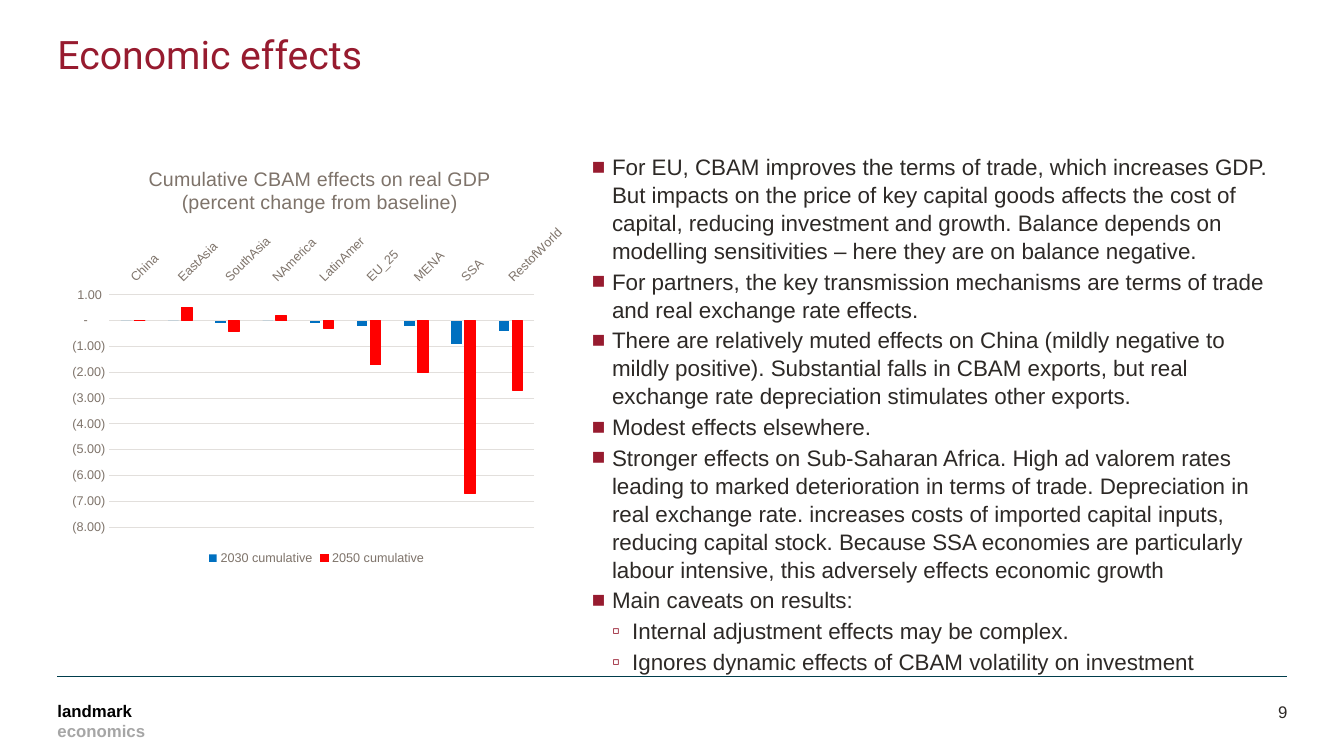
from lxml import etree
from pptx import Presentation
from pptx.chart.data import CategoryChartData
from pptx.dml.color import RGBColor
from pptx.enum.chart import (
    XL_CHART_TYPE as ChartType,
    XL_LEGEND_POSITION as LegendPosition,
    XL_TICK_LABEL_POSITION as LabelPosition,
    XL_TICK_MARK as TickMark,
)
from pptx.enum.shapes import MSO_CONNECTOR as Connector
from pptx.enum.text import MSO_ANCHOR as Anchor, MSO_AUTO_SIZE as AutoSize, PP_ALIGN as Align
from pptx.oxml.ns import qn
from pptx.util import Pt

PX = 9144
MAROON, INK, GREY, RULE = "971B2F", "2D2926", "7E736A", "E2DFDC"

BULLETS = [
    (1, "For EU, CBAM improves the terms of trade, which increases GDP. But impacts on the price of key "
        "capital goods affects the cost of capital, reducing investment and growth. Balance depends on "
        "modelling sensitivities – here they are on balance negative."),
    (1, "For partners, the key transmission mechanisms are terms of trade and real exchange rate effects."),
    (1, "There are relatively muted effects on China (mildly negative to mildly positive). Substantial "
        "falls in CBAM exports, but real exchange rate depreciation stimulates other exports."),
    (1, "Modest effects elsewhere."),
    (1, "Stronger effects on Sub-Saharan Africa. High ad valorem rates leading to marked deterioration in "
        "terms of trade. Depreciation in real exchange rate. increases costs of imported capital inputs, "
        "reducing capital stock. Because SSA economies are particularly labour intensive, this adversely "
        "effects economic growth"),
    (1, "Main caveats on results:"),
    (2, "Internal adjustment effects may be complex."),
    (2, "Ignores dynamic effects of CBAM volatility on investment"),
]
CHART_TITLE = ["Cumulative CBAM effects on real GDP", "(percent change from baseline)"]
REGIONS = ["China", "EastAsia", "SouthAsia", "NAmerica", "LatinAmer", "EU_25", "MENA", "SSA", "RestofWorld"]
SERIES = [
    ("2030 cumulative", "0070C0", [0, 0, -0.1, 0, -0.1, -0.2, -0.2, -0.9, -0.4]),
    ("2050 cumulative", "FF0000", [0, 0.5, -0.4, 0.2, -0.3, -1.7, -2, -6.7, -2.7]),
]
NUMBER_FORMAT = '_(* #,##0.00_);_(* \\(#,##0.00\\);_(* "-"??_);_(@_)'


def rgb(value):
    return RGBColor.from_string(value)


def px(*lengths):
    return [length * PX for length in lengths]


class SlideBuilder:
    """Adds styled elements to one slide, with lengths in hundredths of an inch."""

    def __init__(self, slide, font_name="Arial"):
        self.slide = slide
        self.font_name = font_name

    def style(self, font, size, color, bold=False, name=None):
        font.name = name or self.font_name
        font.size = Pt(size)
        font.bold = bold
        font.color.rgb = rgb(color)

    def frame(self, shape, box, margin=0, anchor=Anchor.TOP):
        shape.left, shape.top, shape.width, shape.height = px(*box)
        text_frame = shape.text_frame
        text_frame.word_wrap = True
        text_frame.auto_size = AutoSize.NONE
        text_frame.vertical_anchor = anchor
        text_frame.margin_left = text_frame.margin_right = 0
        text_frame.margin_top = text_frame.margin_bottom = margin * PX
        return text_frame

    def title(self, box, text):
        text_frame = self.frame(self.slide.shapes.title, box)
        text_frame.text = text
        paragraph = text_frame.paragraphs[0]
        paragraph.alignment = Align.LEFT
        self.style(paragraph.font, 28, MAROON, name="Roboto")

    def bullets(self, box, items):
        text_frame = self.frame(self.slide.placeholders[1], box, margin=5)
        text_frame.text = "\n".join(text for _, text in items)
        for paragraph, (level, _) in zip(text_frame.paragraphs, items):
            paragraph.level = level
            paragraph.space_before = Pt(0)
            paragraph.space_after = Pt(2)
            paragraph.line_spacing = 1.04
            self.style(paragraph.font, 16, INK)
            self.bullet(paragraph, "■" if level == 1 else "▫", level * 20)

    def bullet(self, paragraph, symbol, margin):
        properties = paragraph._p.get_or_add_pPr()
        properties.set("marL", str(margin * PX))
        properties.set("indent", str(-20 * PX))
        color = etree.Element(qn("a:buClr"))
        etree.SubElement(color, qn("a:srgbClr"), val=MAROON)
        font = etree.Element(qn("a:buFont"), typeface=self.font_name)
        character = etree.Element(qn("a:buChar"), char=symbol)
        properties.insert_element_before(color, "a:defRPr")
        properties.insert_element_before(font, "a:defRPr")
        properties.insert_element_before(character, "a:defRPr")

    def text(self, box, runs, size, bold=False, align=Align.LEFT, margin=0, anchor=Anchor.TOP):
        shape = self.slide.shapes.add_textbox(*px(*box))
        paragraph = self.frame(shape, box, margin, anchor).paragraphs[0]
        paragraph.alignment = align
        for content, color in runs:
            run = paragraph.add_run()
            run.text = content
            self.style(run.font, size, color, bold)

    def line(self, start, end, color):
        connector = self.slide.shapes.add_connector(Connector.STRAIGHT, *px(*start, *end))
        connector.line.color.rgb = rgb(color)
        connector.line.width = Pt(1)
        etree.SubElement(connector.element.spPr, qn("a:effectLst"))

    def place(self, part, **fractions):
        layout = part.find(qn("c:layout"))
        if layout is None:
            layout = etree.Element(qn("c:layout"))
            part.insert(0, layout)
        manual = etree.SubElement(layout, qn("c:manualLayout"))
        if "w" in fractions:
            etree.SubElement(manual, qn("c:layoutTarget"), val="inner")
        for axis in "xy":
            etree.SubElement(manual, qn(f"c:{axis}Mode"), val="edge")
        for key, value in fractions.items():
            etree.SubElement(manual, qn(f"c:{key}"), val=str(value))

    def hairline(self, line, color):
        line.color.rgb = rgb(color)
        line.width = Pt(0.75)

    def column_chart(self, box, title_lines, categories, series):
        data = CategoryChartData()
        data.categories = categories
        for name, _, values in series:
            data.add_series(name, values)
        chart = self.slide.shapes.add_chart(ChartType.COLUMN_CLUSTERED, *px(*box), data).chart
        self.style(chart.font, 10, INK)

        title_frame = chart.chart_title.text_frame
        title_frame.text = "\n".join(title_lines)
        for paragraph in title_frame.paragraphs:
            self.style(paragraph.font, 14, GREY)

        chart.has_legend = True
        chart.legend.position = LegendPosition.BOTTOM
        chart.legend.include_in_layout = False
        self.style(chart.legend.font, 9, GREY)

        category_axis, value_axis = chart.category_axis, chart.value_axis
        for axis in (category_axis, value_axis):
            axis.major_tick_mark = axis.minor_tick_mark = TickMark.NONE
            self.style(axis.tick_labels.font, 9, GREY)
        category_axis.tick_label_position = LabelPosition.HIGH
        self.hairline(category_axis.format.line, RULE)
        value_axis.minimum_scale, value_axis.maximum_scale, value_axis.major_unit = -8, 1, 1
        value_axis.tick_labels.number_format = NUMBER_FORMAT
        value_axis.tick_labels.number_format_is_linked = False
        value_axis.format.line.fill.background()
        self.hairline(value_axis.major_gridlines.format.line, RULE)

        plot = chart.plots[0]
        plot.gap_width, plot.overlap, plot.vary_by_categories = 219, -27, False
        for column, (_, color, _) in zip(plot.series, series):
            column.invert_if_negative = False
            column.format.fill.solid()
            column.format.fill.fore_color.rgb = rgb(color)
        self.hairline(plot.series[1].format.line, series[1][1])

        root = chart._chartSpace
        root.xpath("//c:catAx/c:txPr/a:bodyPr")[0].set("rot", "-2700000")
        self.place(root.xpath("//c:chart/c:title")[0], x=0.17, y=0.04)
        self.place(root.xpath("//c:plotArea")[0], x=0.1, y=0.35, w=0.82, h=0.55)


def main():
    presentation = Presentation()
    presentation.slide_width, presentation.slide_height = px(1333, 750)
    builder = SlideBuilder(presentation.slides.add_slide(presentation.slide_layouts[1]))
    builder.line((57, 671), (1276, 671), "003D4C")
    builder.text((961, 686, 316, 40), [("9", INK)], 12, align=Align.RIGHT, anchor=Anchor.MIDDLE)
    builder.text((57, 690, 161, 30), [("landmark ", "000000"), ("economics", "A6A6A6")], 12, bold=True, margin=5)
    builder.title((57, 30, 1219, 94), "Economic effects")
    builder.bullets((587, 146, 689, 525), BULLETS)
    builder.column_chart((57, 146, 514, 419), CHART_TITLE, REGIONS, SERIES)
    presentation.save("out.pptx")


if __name__ == "__main__":
    main()
